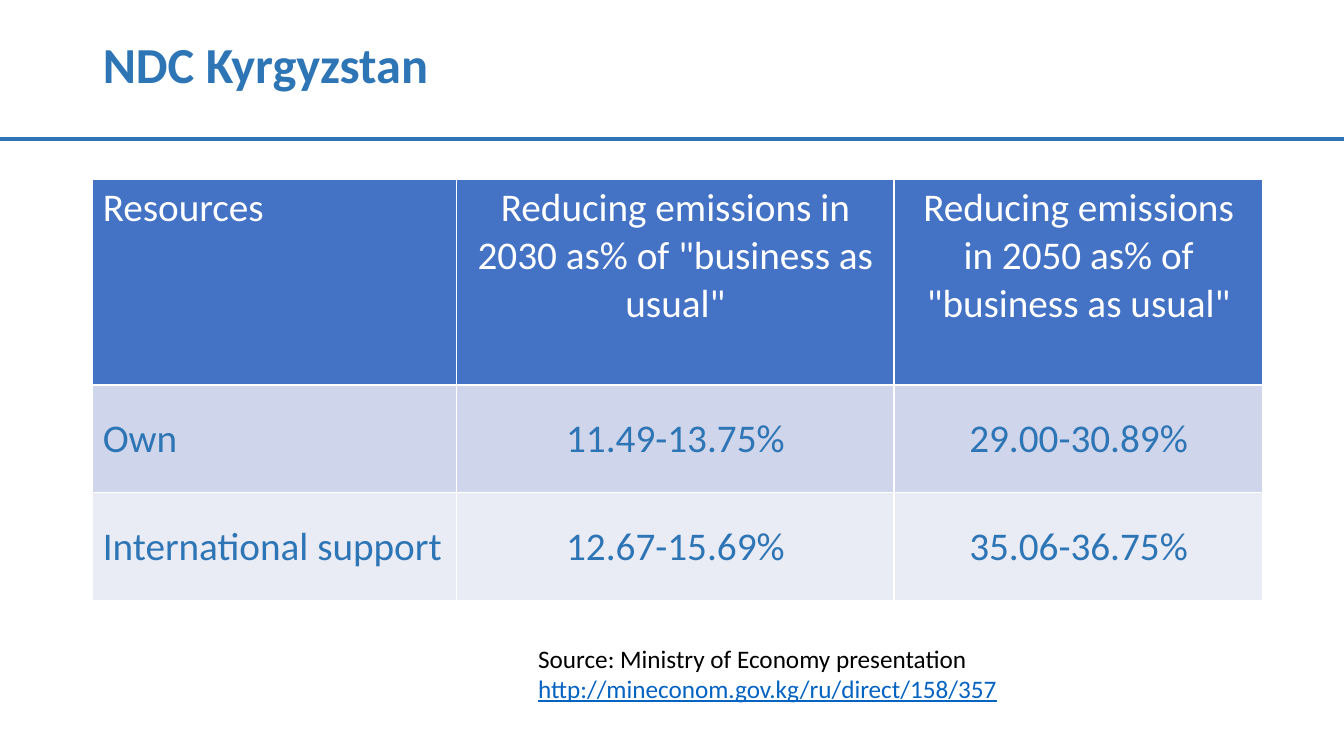
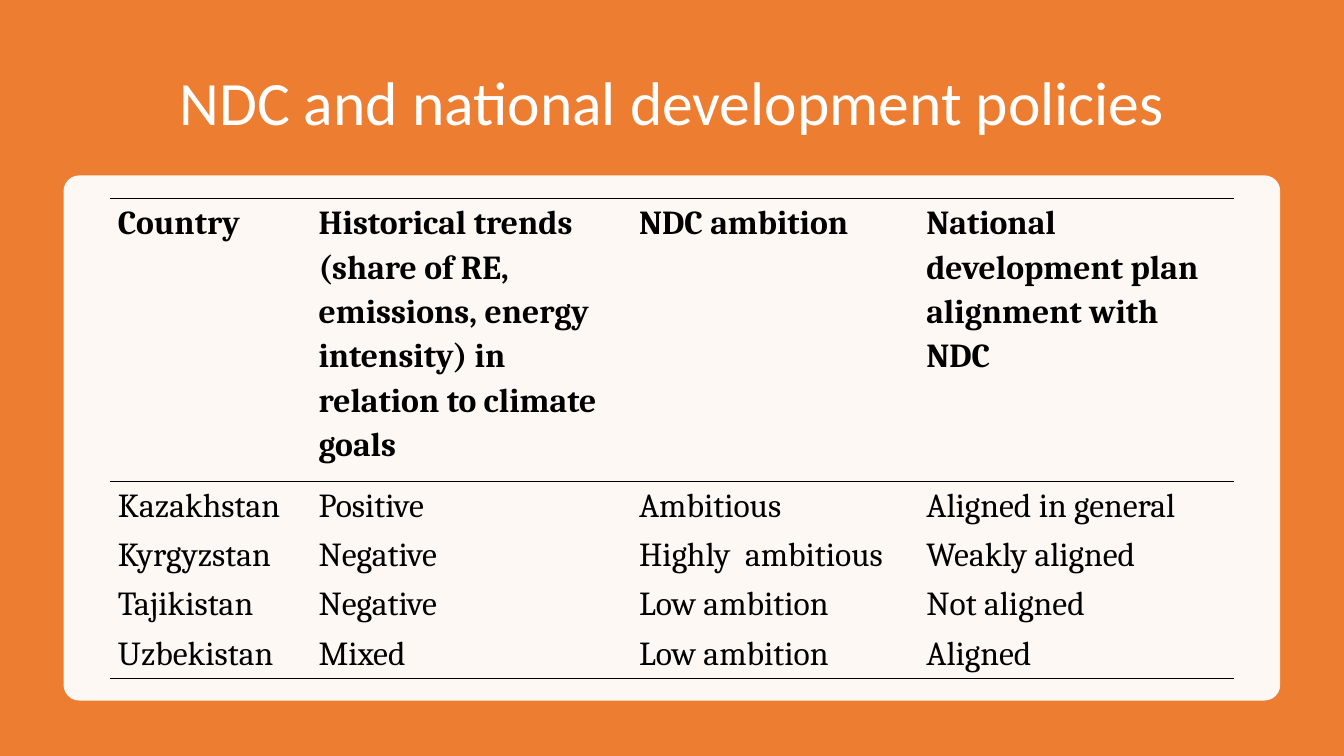
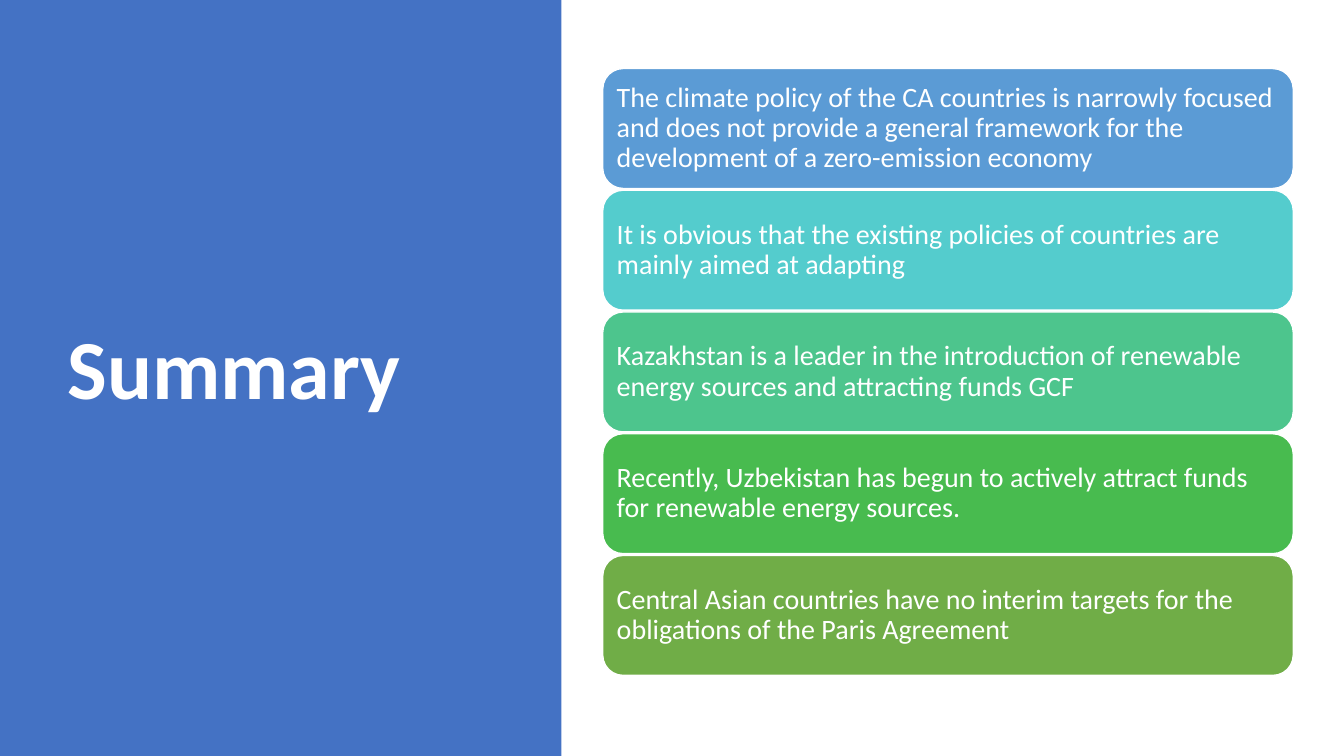
from dataclasses import dataclass

from lxml import etree
from pptx import Presentation
from pptx import util as u
from pptx.dml.color import RGBColor
from pptx.enum import shapes, text
from pptx.oxml.ns import qn

SLIDE_WIDTH, SLIDE_HEIGHT = u.Inches(13.33), u.Inches(7.5)
BODY_FONT, TABLE_FONT = "Calibri", "Cambria"
LEFT, CENTER = text.PP_ALIGN.LEFT, text.PP_ALIGN.CENTER
TOP, MIDDLE = text.MSO_ANCHOR.TOP, text.MSO_ANCHOR.MIDDLE
COLORS = {
    "white": "FFFFFF", "black": "000000", "accent": "2E75B6", "link": "0563C1",
    "blue": "4472C4", "orange": "ED7D31", "band_dark": "CFD5EA", "band_light": "E9EBF5",
}
CARD_COLORS = ["5B9BD5", "54CCCD", "4DC58D", "48BB4F", "70AD47"]

RESOURCES = [
    ["Resources", 'Reducing emissions in 2030 as% of "business as usual"',
     'Reducing emissions in 2050 as% of "business as usual"'],
    ["Own", "11.49-13.75%", "29.00-30.89%"],
    ["International support", "12.67-15.69%", "35.06-36.75%"],
]
POLICIES = [
    ["Country",
     "Historical trends (share of RE, emissions, energy intensity) in relation to climate goals",
     "NDC ambition", "National development plan alignment with NDC"],
    ["Kazakhstan", "Positive", "Ambitious", "Aligned in general"],
    ["Kyrgyzstan", "Negative", "Highly  ambitious", "Weakly aligned"],
    ["Tajikistan", "Negative", "Low ambition", "Not aligned"],
    ["Uzbekistan", "Mixed", "Low ambition", "Aligned"],
]
CONCLUSIONS = [
    "The climate policy of the CA countries is narrowly focused and does not provide "
    "a general framework for the development of a zero-emission economy",
    "It is obvious that the existing policies of countries are mainly aimed at adapting",
    "Kazakhstan is a leader in the introduction of renewable energy sources and attracting funds GCF",
    "Recently, Uzbekistan has begun to actively attract funds for renewable energy sources.",
    "Central Asian countries have no interim targets for the obligations of the Paris Agreement",
]


@dataclass
class Box:
    """A rectangle on the slide."""
    left: int
    top: int
    width: int
    height: int

    def inner(self, left, top, width, height):
        """Return an inner box given in percent of this one."""
        return Box(int(self.left + self.width * left / 100),
                   int(self.top + self.height * top / 100),
                   int(self.width * width / 100), int(self.height * height / 100))

    def edges(self):
        """Return the four values that shape methods take."""
        return self.left, self.top, self.width, self.height

    def rows(self, count, gap):
        """Split into equal rows, with the gap in percent of the height."""
        height = (100 - gap * (count - 1)) / count
        return [self.inner(0, index * (height + gap), 100, height) for index in range(count)]


def rgb(color):
    """Turn a hex string into a colour."""
    return RGBColor.from_string(color)


def format_paragraph(paragraph, size, color, font=BODY_FONT, bold=False, align=LEFT, spacing=1.0):
    """Format a paragraph and all its runs."""
    paragraph.alignment, paragraph.line_spacing = align, spacing
    for run in paragraph.runs:
        run.font.name, run.font.size, run.font.bold = font, u.Pt(size), bold
        run.font.color.rgb = rgb(color)


def set_title(slide, box, wording, size, color, **style):
    """Move, fill and format the title placeholder."""
    title = slide.shapes.title
    title.left, title.top, title.width, title.height = box.edges()
    frame = title.text_frame
    frame.text = wording
    frame.auto_size, frame.word_wrap = text.MSO_AUTO_SIZE.NONE, True
    frame.vertical_anchor = MIDDLE
    format_paragraph(frame.paragraphs[0], size, color, spacing=0.9, **style)


def add_block(slide, box, color, rounding=None):
    """Add a plain rectangle, rounded if a rounding is given."""
    kind = shapes.MSO_SHAPE.RECTANGLE if rounding is None else shapes.MSO_SHAPE.ROUNDED_RECTANGLE
    shape = slide.shapes.add_shape(kind, *box.edges())
    if rounding is not None:
        shape.adjustments[0] = rounding
    shape.shadow.inherit = False
    shape.fill.solid()
    shape.fill.fore_color.rgb = rgb(color)
    shape.line.fill.background()
    return shape


def send_to_back(shape):
    """Place a shape behind all others."""
    shape.element.getparent().insert(2, shape.element)


def add_rule(slide, box, color, width):
    """Draw a horizontal rule along the top of the box."""
    rule = slide.shapes.add_connector(shapes.MSO_CONNECTOR.STRAIGHT, box.left, box.top,
                                      box.left + box.width, box.top)
    rule.line.color.rgb, rule.line.width = rgb(color), u.Pt(width)
    etree.SubElement(rule.element.spPr, qn("a:effectLst"))


def set_borders(cell, sides, color):
    """Draw one-point borders on the named sides and clear the others."""
    properties = cell._tc.get_or_add_tcPr()
    for index, side in enumerate("LRTB"):
        border = etree.Element(qn(f"a:ln{side}"), w=str(u.Pt(1)))
        if side in sides:
            fill = etree.SubElement(border, qn("a:solidFill"))
            etree.SubElement(fill, qn("a:srgbClr"), val=color)
        else:
            etree.SubElement(border, qn("a:noFill"))
        properties.insert(index, border)


def add_grid(slide, box, content, column_shares, row_shares, format_cell):
    """Add a table whose cells are formatted by the given function."""
    table = slide.shapes.add_table(len(content), len(content[0]), *box.edges()).table
    table.first_row = table.horz_banding = False
    for column, share in zip(table.columns, column_shares):
        column.width = int(box.width * share / sum(column_shares))
    for row, share in zip(table.rows, row_shares):
        row.height = int(box.height * share / sum(row_shares))
    for row_index, row in enumerate(content):
        for column_index, wording in enumerate(row):
            cell = table.cell(row_index, column_index)
            cell.text_frame.text = wording
            format_cell(cell, row_index, column_index)


def format_resource_cell(cell, row, column):
    """Give a cell a coloured band and white borders."""
    cell.fill.solid()
    cell.fill.fore_color.rgb = rgb(COLORS[["blue", "band_dark", "band_light"][row]])
    cell.vertical_anchor = MIDDLE if row else TOP
    format_paragraph(cell.text_frame.paragraphs[0], 28, COLORS["accent" if row else "white"],
                     align=CENTER if column else LEFT)
    set_borders(cell, "LRTB", COLORS["white"])


def format_policy_cell(cell, row, column):
    """Leave a cell clear, with rules around the heading and at the end."""
    cell.fill.background()
    cell.margin_left = cell.margin_right = u.Inches(0.08)
    cell.margin_top = cell.margin_bottom = 0
    format_paragraph(cell.text_frame.paragraphs[0], 24, COLORS["black"], font=TABLE_FONT,
                     bold=row == 0, spacing=1.15)
    set_borders(cell, {0: "TB", 1: "T", len(POLICIES) - 1: "B"}.get(row, ""), COLORS["black"])


def add_source(slide, box):
    """Add the source note with its web address."""
    frame = slide.shapes.add_textbox(*box.edges()).text_frame
    frame.word_wrap = True
    paragraph = frame.paragraphs[0]
    paragraph.text = "Source: Ministry of Economy presentation "
    address = paragraph.add_run()
    address.text = "http://mineconom.gov.kg/ru/direct/158/357"
    format_paragraph(paragraph, 18, COLORS["black"])
    address.font.color.rgb, address.font.underline = rgb(COLORS["link"]), True


def add_cards(slide, box):
    """Stack one coloured card for each conclusion."""
    for card_box, color, wording in zip(box.rows(len(CONCLUSIONS), 0.3), CARD_COLORS, CONCLUSIONS):
        card = add_block(slide, card_box, color, 0.17)
        card.line.color.rgb, card.line.width = rgb(COLORS["white"]), u.Pt(1)
        frame = card.text_frame
        frame.text = wording
        frame.word_wrap, frame.vertical_anchor = True, MIDDLE
        frame.margin_left = frame.margin_right = u.Inches(0.08)
        frame.margin_top = frame.margin_bottom = u.Inches(0.08)
        format_paragraph(frame.paragraphs[0], 20, COLORS["white"], spacing=0.9)


def build_resources(slide, page):
    """Build the slide on emission targets by resource."""
    set_title(slide, page.inner(6.9, 1.87, 90, 14.13), "NDC Kyrgyzstan", 36, COLORS["accent"], bold=True)
    add_rule(slide, page.inner(0, 18.4, 100, 0), COLORS["accent"], 3)
    add_grid(slide, page.inner(6.9, 23.73, 87.08, 55.73), RESOURCES,
             [3.61, 4.34, 3.66], [2.04, 1.07, 1.07], format_resource_cell)
    add_source(slide, page.inner(39.3, 84.4, 48.53, 9.47))


def build_policies(slide, page):
    """Build the slide that compares countries on a pale panel."""
    send_to_back(add_block(slide, page, COLORS["orange"]))
    set_title(slide, page.inner(6.9, 6.67, 86.25, 14.67), "NDC and national development policies",
              44, COLORS["white"], align=CENTER)
    panel_box = page.inner(4.73, 23.2, 90.53, 69.47)
    panel = add_block(slide, panel_box, COLORS["white"], 0.03)
    panel_color = panel.element.spPr.find(".//" + qn("a:srgbClr"))
    etree.SubElement(panel_color, qn("a:alpha"), val="95000")
    add_grid(slide, panel_box.inner(3.81, 4.41, 92.38, 91.36), POLICIES,
             [1.99, 3.18, 2.85, 3.13], [2.81] + [0.49] * 4, format_policy_cell)


def build_summary(slide, page):
    """Build the closing slide with a side panel and cards."""
    sidebar = page.inner(0, 0, 41.78, 100)
    send_to_back(add_block(slide, sidebar, COLORS["blue"]))
    set_title(slide, sidebar.inner(10.23, 9.07, 74.69, 80.27), "Summary", 60, COLORS["white"], bold=True)
    add_cards(slide, page.inner(44.85, 9.07, 51.38, 80.27))


def main():
    """Build and save the presentation."""
    presentation = Presentation()
    presentation.slide_width, presentation.slide_height = SLIDE_WIDTH, SLIDE_HEIGHT
    page = Box(0, 0, SLIDE_WIDTH, SLIDE_HEIGHT)
    for build in (build_resources, build_policies, build_summary):
        build(presentation.slides.add_slide(presentation.slide_layouts[5]), page)
    presentation.save("out.pptx")


if __name__ == "__main__":
    main()
